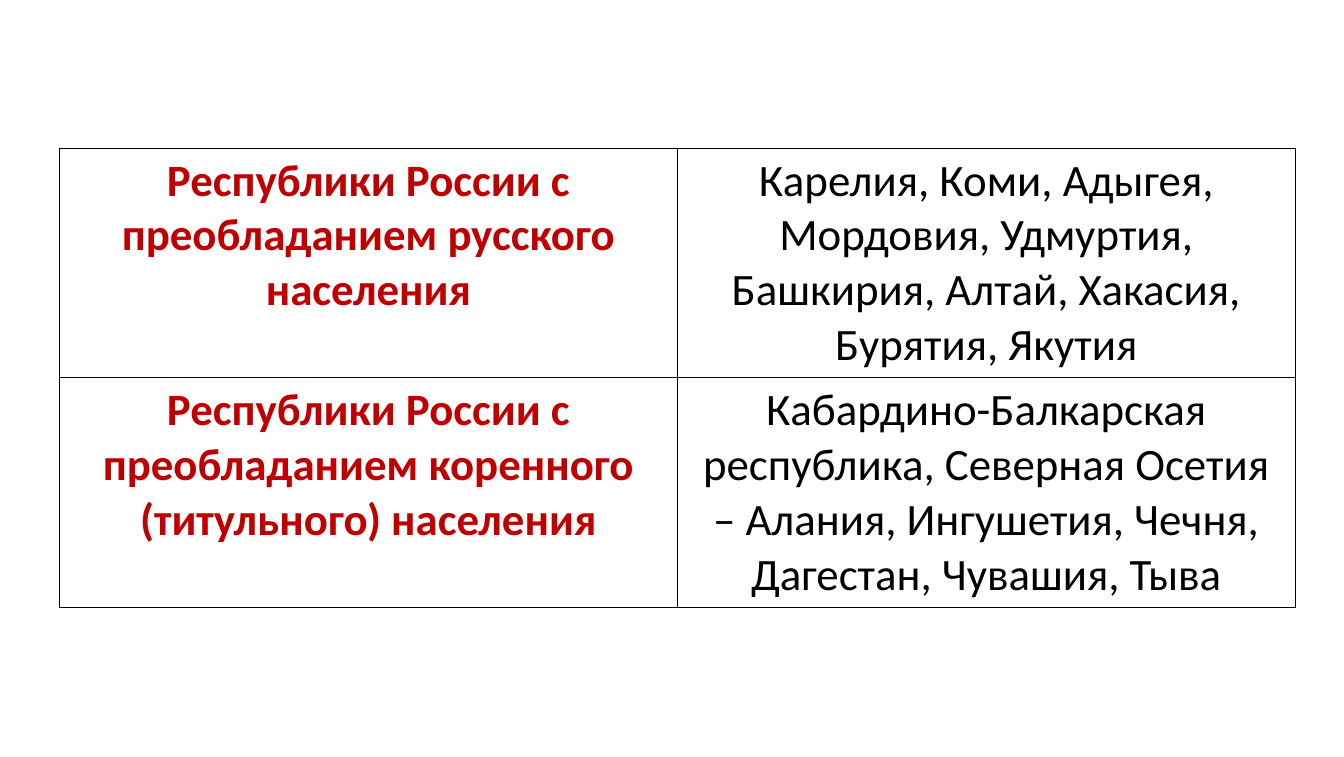
from dataclasses import dataclass

from pptx import Presentation
from pptx.dml.color import RGBColor
from pptx.enum.text import PP_ALIGN as Align
from pptx.oxml import parse_xml
from pptx.oxml.ns import nsdecls
from pptx.util import Pt

COLORS = {"group": "C00000", "text": "000000", "border": "000000"}
LEFT, TOP = 42.5, 105.8
COL_WIDTH, ROW_HEIGHT = 440.6, 163.5


@dataclass
class RepublicGroup:
    name: str
    republics: str


GROUPS = [
    RepublicGroup(
        "Республики России с преобладанием русского населения",
        "Карелия, Коми, Адыгея, Мордовия, Удмуртия, Башкирия, Алтай, "
        "Хакасия, Бурятия, Якутия",
    ),
    RepublicGroup(
        "Республики России с преобладанием коренного (титульного) населения",
        "Кабардино-Балкарская республика, Северная Осетия – Алания, "
        "Ингушетия, Чечня, Дагестан, Чувашия, Тыва",
    ),
]


def add_borders(cell) -> None:
    tc_pr = cell._tc.get_or_add_tcPr()
    for i, side in enumerate(("lnL", "lnR", "lnT", "lnB")):
        # Border lines come before the cell fill
        tc_pr.insert(i, parse_xml(
            f'<a:{side} {nsdecls("a")} w="{Pt(1)}"><a:solidFill>'
            f'<a:srgbClr val="{COLORS["border"]}"/></a:solidFill></a:{side}>'
        ))


def fill_cell(cell, text: str, color: str, bold: bool) -> None:
    cell.fill.background()
    add_borders(cell)
    p = cell.text_frame.paragraphs[0]
    p.text = text
    p.alignment = Align.CENTER
    p.font.name = "Calibri"
    p.font.size = Pt(32)
    p.font.bold = bold
    p.font.color.rgb = RGBColor.from_string(COLORS[color])


def main() -> None:
    prs = Presentation()
    prs.slide_width, prs.slide_height = Pt(958.3), Pt(540)
    s = prs.slides.add_slide(prs.slide_layouts[6])

    # Table of republics by prevailing population
    table = s.shapes.add_table(
        len(GROUPS), 2, Pt(LEFT), Pt(TOP),
        Pt(2 * COL_WIDTH), Pt(len(GROUPS) * ROW_HEIGHT),
    ).table
    table.first_row = table.horz_banding = False

    # One row per group
    for i, group in enumerate(GROUPS):
        fill_cell(table.cell(i, 0), group.name, "group", True)
        fill_cell(table.cell(i, 1), group.republics, "text", False)

    prs.save("out.pptx")


if __name__ == "__main__":
    main()
